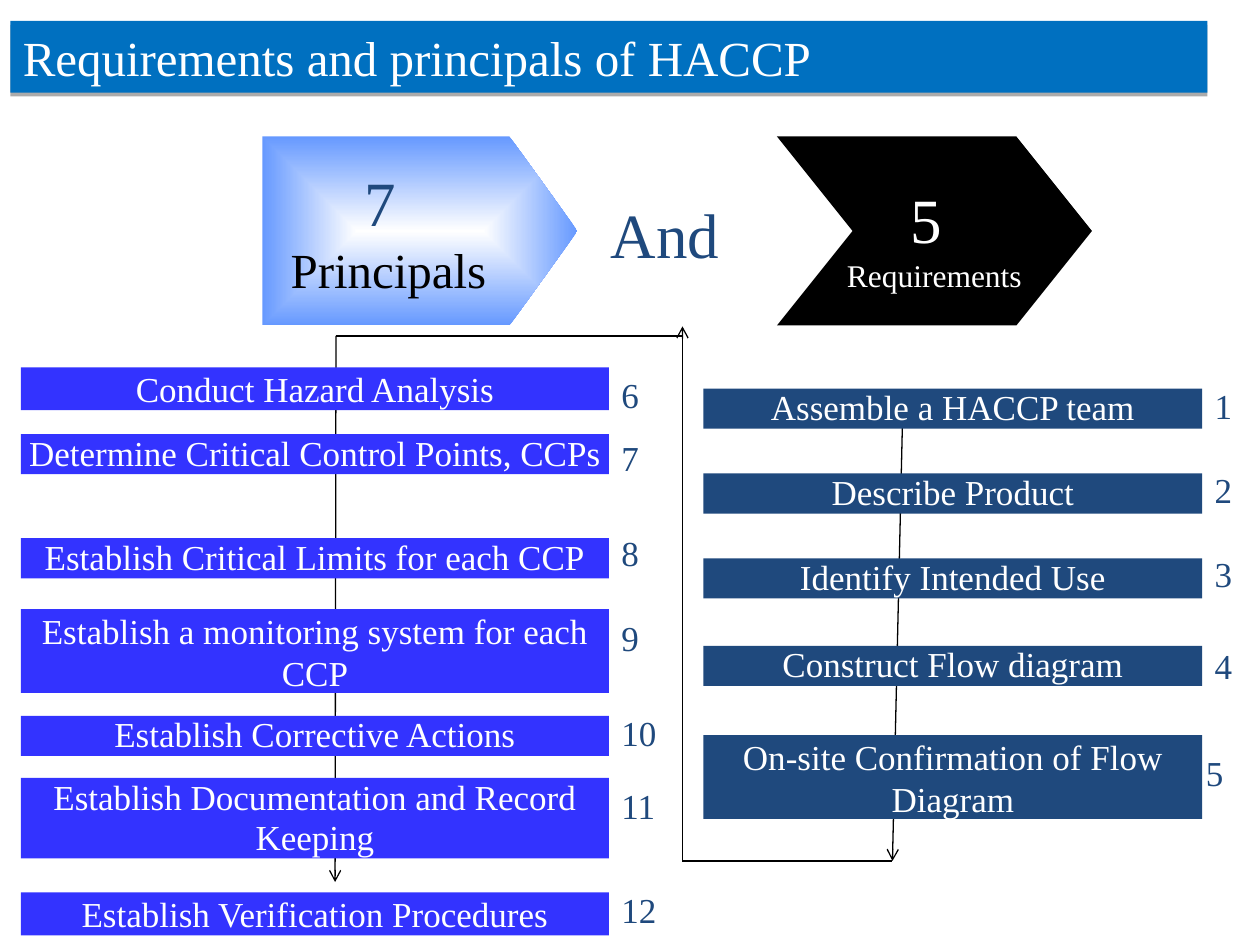
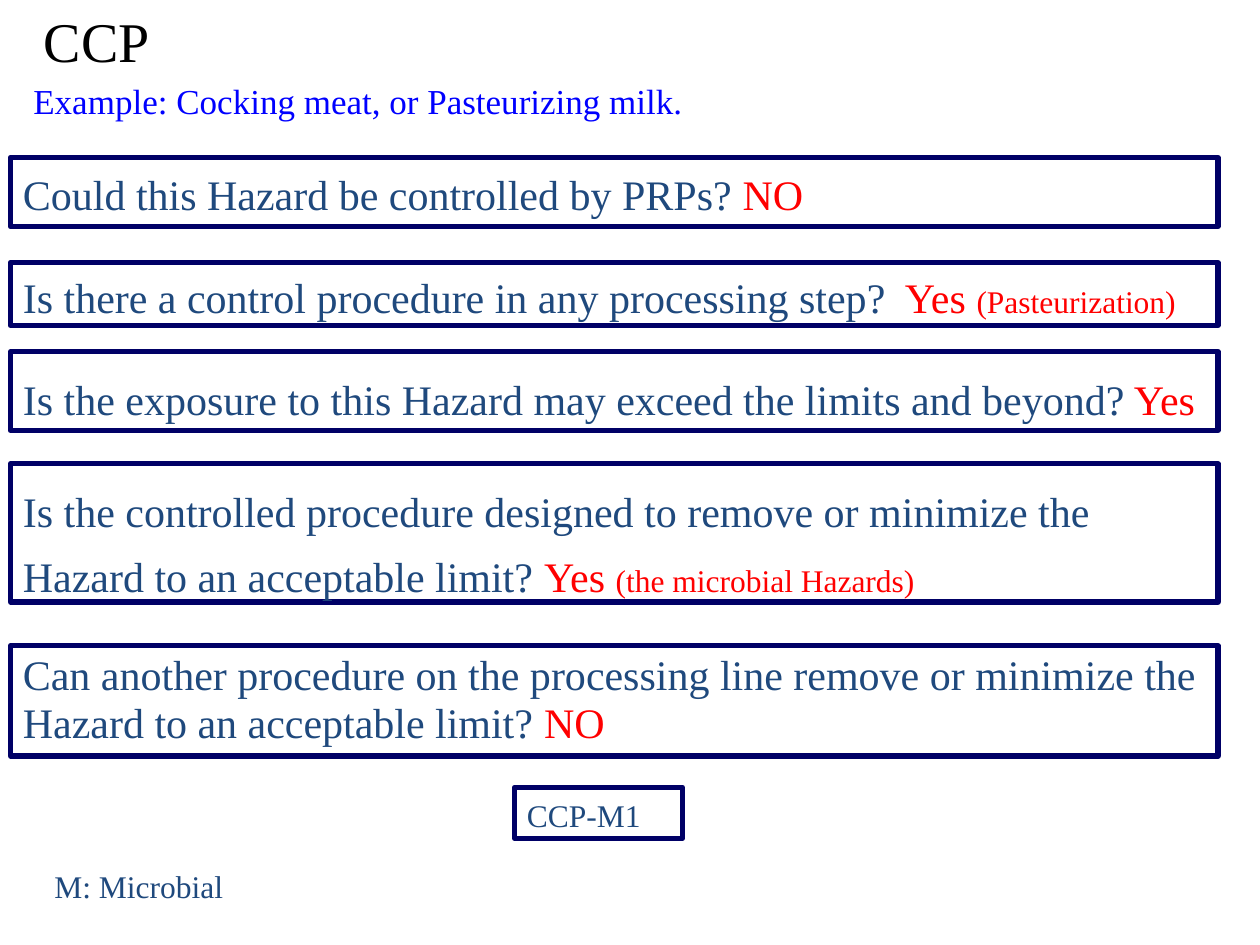
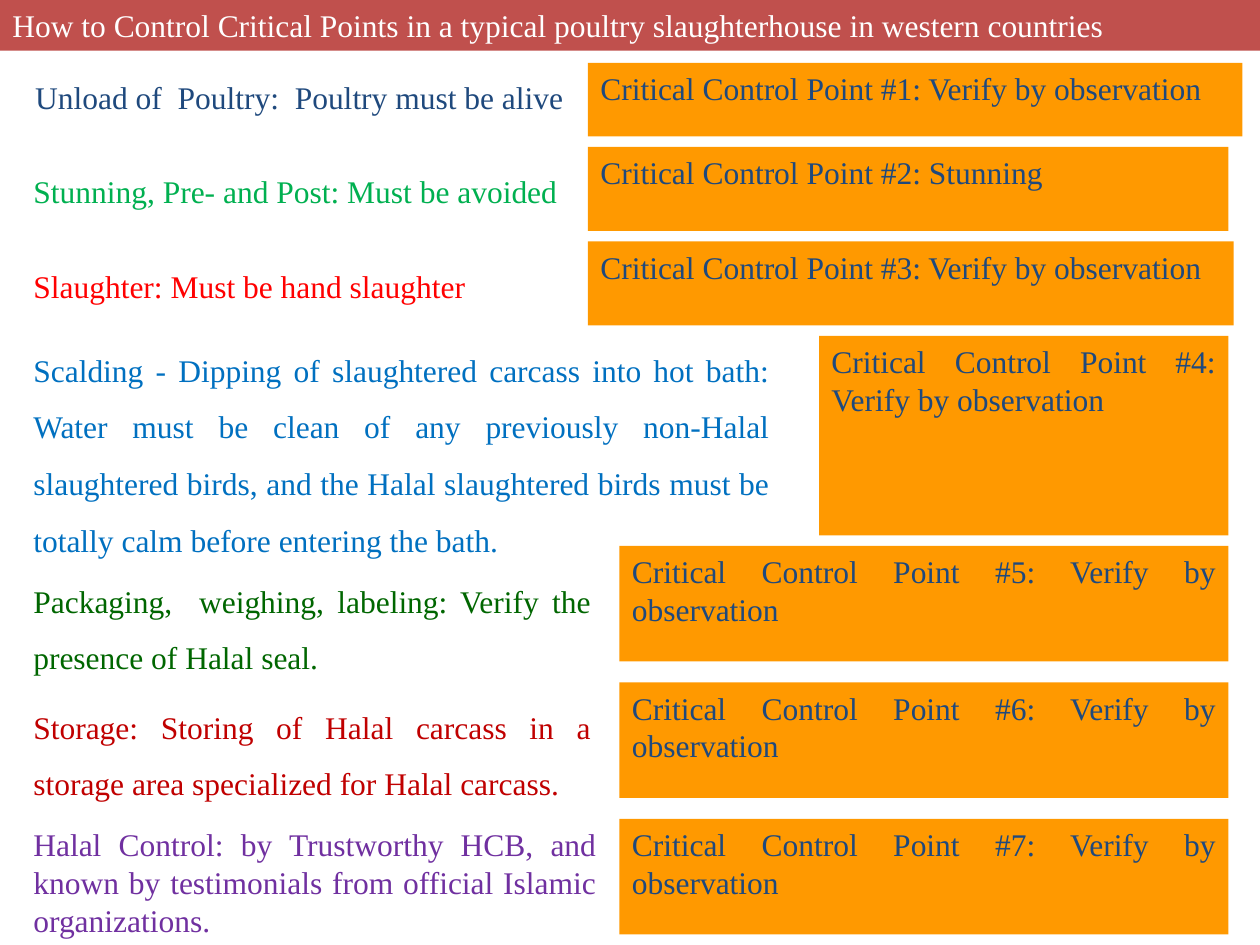
from lxml import etree
from pptx import Presentation
from pptx import util as u
from pptx.dml import color
from pptx.enum import shapes, text
from pptx.oxml import parse_xml
from pptx.oxml import ns

FONT = "Times New Roman"
NAVY, WHITE, BLACK, RED = "1F497D", "FFFFFF", "000000", "FF0000"
BLUE, EDGE, AMBER = "3333FF", "000066", "FF9900"
FORM = shapes.MSO_SHAPE
LEFT, MID, FULL = text.PP_ALIGN.LEFT, text.PP_ALIGN.CENTER, text.PP_ALIGN.JUSTIFY

TITLE = "Requirements and principals of HACCP"
RULES = [
    ("6", 210, 210, 24.5, 1, "Conduct Hazard Analysis"),
    ("7", 246, 248, 23, 0.95, "Determine Critical Control Points, CCPs"),
    ("8", 300, 307.5, 23, 0.95, "Establish Critical Limits for each CCP"),
    ("9", 349, 348, 48, 1, "Establish a monitoring system for each CCP"),
    ("10", 403, 409, 23, 0.95, "Establish Corrective Actions"),
    ("11", 445, 444.5, 46, 0.95, "Establish Documentation and Record Keeping"),
    ("12", 504, 510, 24.5, 1, "Establish Verification Procedures"),
]
NEEDS = [
    ("1", 216, 222, 23, 0.95, "Assemble a HACCP team"),
    ("2", 264, 270.5, 23, 0.95, "Describe Product"),
    ("3", 312, 319, 23, 0.95, "Identify Intended Use"),
    ("4", 365, 369, 23, 0.95, "Construct Flow diagram"),
    ("5", 426, 420, 48, 1, "On-site Confirmation of Flow Diagram"),
]
COLUMNS = [
    (RULES, 12, 336, BLUE),
    (NEEDS, 402, 285, NAVY),
]
LINES = [
    (390, 492, 510, 492, False),
    (390, 492, 390, 186.5, True),
    (192, 192, 390, 192, False),
    (192, 192, 191.5, 504, True),
    (516, 228, 510, 492, True),
]

ASKS = [
    (90, 39.5, 1.1, "Could this Hazard be controlled by PRPs? ", "NO", ""),
    (150, 36, 1.05, "Is there a control procedure in any processing step?", " \tYes ", "(Pasteurization)"),
    (201, 45, 1.3, "Is the exposure to this Hazard may exceed the limits and beyond?", " Yes", ""),
    (265, 79, 1.3, "Is the controlled procedure designed to remove or minimize the Hazard "
     "to an acceptable limit? ", "Yes ", "(the microbial Hazards)"),
    (369, 63, 0.95, "Can another procedure on the processing line remove or minimize the Hazard "
     "to an acceptable limit? ", "NO", ""),
]

HEAD = "How to Control Critical Points in a typical poultry slaughterhouse in western countries"
SEEN = "Verify by observation"
STAGES = [
    ((336, 36, 374, 42), SEEN, (13, 30, 708, 48), 1.5, NAVY,
     "Unload of  Poultry:  Poultry must be alive"),
    ((336, 84, 366, 48), "Stunning", (12, 84, 708, 48), 1.5, "00B050",
     "Stunning, Pre- and Post: Must be avoided"),
    ((336, 138, 369, 48), SEEN, (12, 138, 708, 48), 1.5, RED,
     "Slaughter: Must be hand slaughter"),
    ((468, 192, 234, 114), SEEN, (12, 186, 435, 138), 1.5, "0070C0",
     "Scalding - Dipping of slaughtered carcass into hot bath: Water must be clean of any "
     "previously non-Halal slaughtered birds, and the Halal slaughtered birds must be "
     "totally calm before entering the bath."),
    ((354, 312, 348, 66), SEEN, (12, 318, 333, 66), 1.5, "006600",
     "Packaging,  weighing, labeling: Verify the presence of Halal seal."),
    ((354, 390, 348, 66), SEEN, (12, 390, 333, 66), 1.5, "C00000",
     "Storage: Storing of Halal carcass in a storage area specialized for Halal carcass."),
    ((354, 468, 348, 66), SEEN, (12, 468, 336, 66), 1, "7030A0",
     "Halal Control: by Trustworthy HCB, and known by testimonials from official "
     "Islamic organizations."),
]


def tint(code):
    return color.RGBColor.from_string(code)


def shape(slide, box, form=None, fill=None, edge=None):
    area = [u.Pt(v) for v in box]
    if form is None:
        return slide.shapes.add_textbox(*area)
    item = slide.shapes.add_shape(form, *area)
    item.shadow.inherit = False
    if fill:
        item.fill.solid()
        item.fill.fore_color.rgb = tint(fill)
    else:
        item.fill.background()
    if edge:
        item.line.color.rgb = tint(edge)
        item.line.width = u.Pt(3)
    else:
        item.line.fill.background()
    return item


def write(item, words, size=18, ink=NAVY, align=LEFT, gap=1, mid=False, pad=True, wrap=True):
    frame = item.text_frame
    frame.word_wrap = wrap
    frame.vertical_anchor = text.MSO_ANCHOR.MIDDLE if mid else text.MSO_ANCHOR.TOP
    if not pad:
        frame.margin_left = frame.margin_right = 0
        frame.margin_top = frame.margin_bottom = 0
    rows = [[(words, size, ink)]] if isinstance(words, str) else words
    for n, row in enumerate(rows):
        para = frame.add_paragraph() if n else frame.paragraphs[0]
        para.alignment = align
        para.line_spacing = gap
        for part, high, hue in row:
            run = para.add_run()
            run.text = part
            run.font.name = FONT
            run.font.size = u.Pt(high)
            run.font.color.rgb = tint(hue)
    return item


def line(slide, x, y, end, foot, arrow):
    item = slide.shapes.add_connector(
        shapes.MSO_CONNECTOR.STRAIGHT, u.Pt(x), u.Pt(y), u.Pt(end), u.Pt(foot))
    item.line.color.rgb = tint(BLACK)
    item.line.width = u.Pt(0.75)
    if arrow:
        etree.SubElement(item.line._ln, ns.qn("a:tailEnd"), type="arrow")
    etree.SubElement(item._element.spPr, ns.qn("a:effectLst"))


def glow(item, inner, outer):
    props = item._element.spPr
    old = props.find(ns.qn("a:solidFill"))
    props.replace(old, parse_xml(
        f'<a:gradFill {ns.nsdecls("a")}><a:gsLst>'
        f'<a:gs pos="0"><a:srgbClr val="{inner}"/></a:gs>'
        f'<a:gs pos="100000"><a:srgbClr val="{outer}"/></a:gs></a:gsLst>'
        '<a:path path="shape"><a:fillToRect l="50000" t="50000" r="50000" b="50000"/>'
        '</a:path></a:gradFill>'))


def shade(item):
    effects = item._element.spPr.find(ns.qn("a:effectLst"))
    effects.append(parse_xml(
        f'<a:outerShdw {ns.nsdecls("a")} blurRad="0" dist="{u.Pt(2.2)}" dir="5400000" '
        'rotWithShape="0"><a:srgbClr val="000000"><a:alpha val="32000"/></a:srgbClr>'
        '</a:outerShdw>'))


def steps(slide):
    write(shape(slide, (342, 108, 132, 51)), "And", size=36)
    plate = shape(slide, (150, 78, 180, 108), FORM.PENTAGON, WHITE)
    plate.adjustments[0] = 0.36
    glow(plate, WHITE, "6699FF")
    notch = shape(slide, (444, 78, 180, 108), FORM.CHEVRON, BLACK)
    notch.adjustments[0] = 0.4
    write(shape(slide, (462, 99.5, 144, 73)),
          [[("5 ", 36, WHITE)], [("Requirements", 18, WHITE)]], align=MID)
    write(shape(slide, (132, 90, 180, 85)),
          [[("7 ", 36, NAVY)], [("Principals", 28, BLACK)]], align=MID)
    for ends in LINES:
        line(slide, *ends)
    for rows, x, wide, fill in COLUMNS:
        for mark, top, y, high, gap, words in rows:
            edge = x + wide - (5 if mark == "5" else 0)
            write(shape(slide, (edge, top, 44, 31)), mark, size=20)
            bar = shape(slide, (x, y, wide, high), FORM.RECTANGLE, fill)
            write(bar, words, size=20, ink=WHITE, align=MID, gap=gap, mid=True, pad=False)
    band = shape(slide, (6, 12, 684, 41), FORM.RECTANGLE, "0070C0")
    shade(band)
    write(band, TITLE, size=28, ink=WHITE)


def checks(slide):
    write(shape(slide, (18, 6, 94, 40)), "CCP", size=32, ink=BLACK, gap=0.85)
    for y, high, gap, ask, reply, note in ASKS:
        row = [(ask, 24, NAVY), (reply, 24, RED)]
        if note:
            row.append((note, 18, RED))
        write(shape(slide, (6, y, 690, high), FORM.RECTANGLE, edge=EDGE), [row], gap=gap)
    write(shape(slide, (294, 450, 96, 29), FORM.RECTANGLE, edge=EDGE), "CCP-M1", gap=1.05)
    write(shape(slide, (12, 42, 690, 32)), "Example: Cocking meat, or Pasteurizing milk.",
          size=20, ink="0000FF", align=FULL)
    write(shape(slide, (24, 492, 119, 29)), "M: Microbial", wrap=False)


def points(slide):
    for n, (box, check, area, gap, ink, words) in enumerate(STAGES, 1):
        write(shape(slide, box, FORM.RECTANGLE, AMBER),
              f"Critical Control Point #{n}: {check}", align=FULL)
        write(shape(slide, area), words, ink=ink, align=FULL, gap=gap)
    write(shape(slide, (0, 0, 720, 29), FORM.RECTANGLE, "C0504D"), HEAD,
          ink=WHITE, align=FULL, mid=True)


def main():
    deck = Presentation()
    deck.slide_width, deck.slide_height = u.Pt(720), u.Pt(540)
    for fill in (steps, checks, points):
        fill(deck.slides.add_slide(deck.slide_layouts[6]))
    deck.save("out.pptx")


if __name__ == "__main__":
    main()
